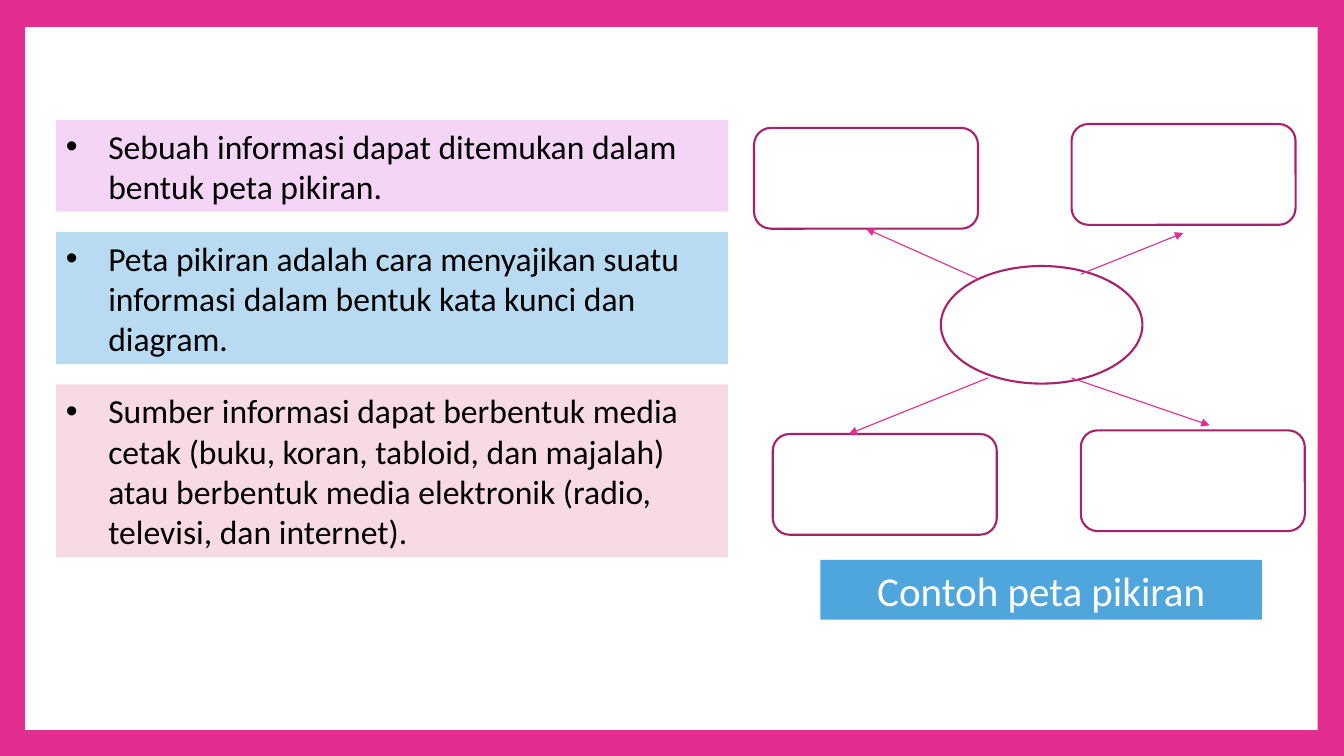
from lxml import etree
from pptx import Presentation
from pptx.dml.color import RGBColor
from pptx.enum.shapes import MSO_CONNECTOR, MSO_SHAPE
from pptx.enum.text import MSO_ANCHOR, PP_ALIGN
from pptx.oxml.ns import qn
from pptx.util import Inches, Pt

RECT, ROUNDED, OVAL = MSO_SHAPE.RECTANGLE, MSO_SHAPE.ROUNDED_RECTANGLE, MSO_SHAPE.OVAL
STRAIGHT = MSO_CONNECTOR.STRAIGHT
MIDDLE = MSO_ANCHOR.MIDDLE
LEFT, CENTER = PP_ALIGN.LEFT, PP_ALIGN.CENTER
BOTTOM = 2

WIDTH, HEIGHT = Inches(13.33), Inches(7.5)
COLS, ROWS = 48, 27
FONT = "Calibri"
COLORS = {
    "pink": "E32D91", "outline": "A8216B", "white": "FFFFFF", "black": "000000",
    "lilac": "F4D5F5", "sky": "B8DBF1", "rose": "F7DAE3", "blue": "4EA6DC",
}

NOTES = [
    ("lilac", 2, "Sebuah informasi dapat ditemukan dalam bentuk peta pikiran."),
    ("sky", 3, "Peta pikiran adalah cara menyajikan suatu informasi dalam bentuk "
               "kata kunci dan diagram."),
    ("rose", 4, "Sumber informasi dapat berbentuk media cetak (buku, koran, tabloid, "
                "dan majalah) atau berbentuk media elektronik (radio, televisi, dan internet)."),
]
NOTE_TOP, NOTE_GAP, LINE_ROWS, PADDING_ROWS = 4.28, 0.72, 1.45, 0.38
BRANCHES = [(26.93, 4.57), (38.27, 4.43), (27.6, 15.5), (38.6, 15.37)]
ARROWS = [
    ((34.96, 9.97), (30.93, 8.17)),
    ((38.6, 9.79), (42.26, 8.32)),
    ((35.28, 13.5), (30.31, 15.5)),
    ((38.27, 13.5), (43.2, 15.19)),
]


def color(name):
    return RGBColor.from_string(COLORS[name])


def x(col):
    return round(WIDTH * col / COLS)


def y(row):
    return round(HEIGHT * row / ROWS)


def add_box(s, kind, col, row, cols, rows, fill=None, line=None):
    sp = s.shapes.add_shape(kind, x(col), y(row), x(cols), y(rows))
    sp.shadow.inherit = False
    if fill:
        sp.fill.solid()
        sp.fill.fore_color.rgb = color(fill)
    else:
        sp.fill.background()
    if line:
        sp.line.color.rgb = color(line)
        sp.line.width = Pt(1.5)
    else:
        sp.line.fill.background()
    return sp


def set_text(sp, text, size, ink, align, bullet=False):
    tf = sp.text_frame
    tf.word_wrap = True
    tf.vertical_anchor = MIDDLE
    p = tf.paragraphs[0]
    p.text = text
    p.alignment = align
    if bullet:
        pPr = p._p.get_or_add_pPr()
        pPr.set("marL", str(Inches(0.42)))
        pPr.set("indent", str(-Inches(0.42)))
        etree.SubElement(pPr, qn("a:buFont")).set("typeface", "Arial")
        etree.SubElement(pPr, qn("a:buChar")).set("char", "•")
    r = p.runs[0]
    r.font.name = FONT
    r.font.size = Pt(size)
    r.font.color.rgb = color(ink)


def add_arrow(s, start, end):
    line = s.shapes.add_connector(STRAIGHT, x(start[0]), y(start[1]), x(end[0]), y(end[1]))
    line.line.color.rgb = color("pink")
    line.line.width = Pt(0.79)
    ln = line.line._get_or_add_ln()
    etree.SubElement(ln, qn("a:tailEnd")).set("type", "triangle")
    etree.SubElement(line._element.spPr, qn("a:effectLst"))
    return line


def add_notes(s):
    top = NOTE_TOP
    for fill, lines, text in NOTES:
        rows = lines * LINE_ROWS + PADDING_ROWS
        sp = add_box(s, RECT, 2, top, 24, rows, fill)
        set_text(sp, text, 24, "black", LEFT, bullet=True)
        top += rows + NOTE_GAP


def add_mind_map(s):
    add_box(s, OVAL, 33.6, 9.5, 7.2, 4.2, line="outline")
    branches = [add_box(s, ROUNDED, col, row, 8, 3.6, line="outline") for col, row in BRANCHES]
    arrows = [add_arrow(s, start, end) for start, end in ARROWS]
    arrows[0].end_connect(branches[0], BOTTOM)


def main():
    prs = Presentation()
    prs.slide_width, prs.slide_height = WIDTH, HEIGHT
    s = prs.slides.add_slide(prs.slide_layouts[6])
    s.background.fill.solid()
    s.background.fill.fore_color.rgb = color("pink")
    add_box(s, RECT, 0.9, 0.97, 46.16, 25.1, "white")
    add_notes(s)
    add_mind_map(s)
    caption = add_box(s, RECT, 29.3, 20, 15.77, 2.13, "blue")
    set_text(caption, "Contoh peta pikiran", 29.3, "white", CENTER)
    prs.save("out.pptx")


if __name__ == "__main__":
    main()
